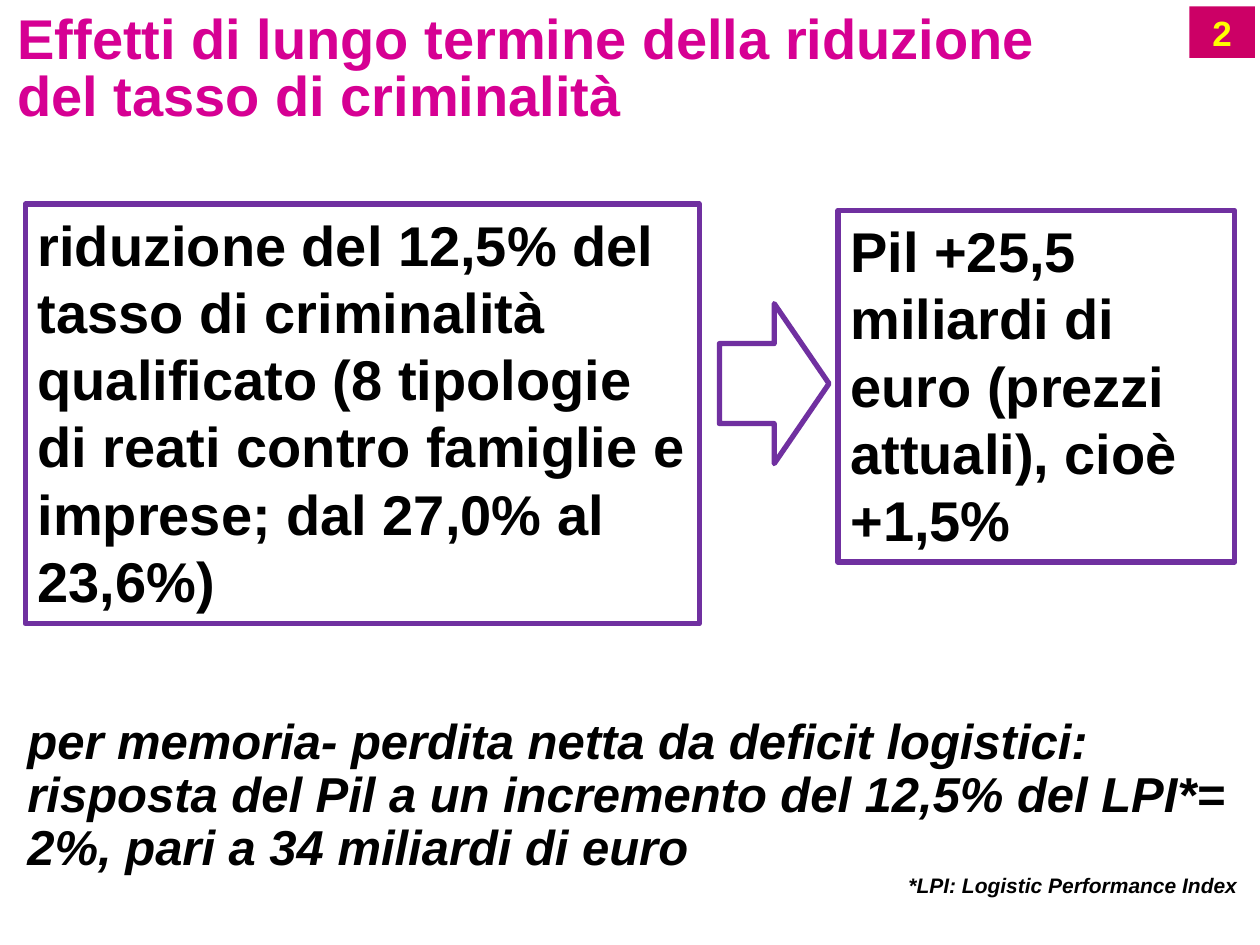
from pptx import Presentation
from pptx.dml.color import RGBColor
from pptx.enum.shapes import MSO_SHAPE
from pptx.enum.text import MSO_ANCHOR, MSO_AUTO_SIZE, PP_ALIGN
from pptx.util import Inches, Pt

WIDE, HIGH = 10, 7.5
COLORS = {
    "title": "D60093",
    "badge": "CC0066",
    "number": "FFFF00",
    "edge": "7030A0",
    "text": "000000",
    "paper": "FFFFFF",
}
BODY = {"name": "Arial", "size": Pt(32), "bold": True}
MEMO = BODY | {"size": Pt(28), "italic": True}
NOTE = MEMO | {"size": Pt(12)}
GROW = {"word_wrap": True, "auto_size": MSO_AUTO_SIZE.SHAPE_TO_FIT_TEXT}
MID = {"word_wrap": False, "vertical_anchor": MSO_ANCHOR.MIDDLE}


def color(key):
    return RGBColor.from_string(COLORS[key])


def apply(item, values):
    for key, value in values.items():
        setattr(item, key, value)


def panel(slide, kind, box, fill=None, edge=None):
    """Draw a preset shape; box is left, top, width, height in inches."""
    shape = slide.shapes.add_shape(kind, *map(Inches, box))
    shape.shadow.inherit = False
    if fill:
        shape.fill.solid()
        shape.fill.fore_color.rgb = color(fill)
    else:
        shape.fill.background()
    if edge:
        shape.line.color.rgb = color(edge)
        shape.line.width = Pt(3)
    else:
        shape.line.fill.background()
    return shape


def write(shape, lines, frame=GROW):
    """Fill a shape with (text, font, color, paragraph format) lines."""
    body = shape.text_frame
    apply(body, {"vertical_anchor": MSO_ANCHOR.TOP} | frame)
    for i, (text, font, ink, form) in enumerate(lines):
        para = body.add_paragraph() if i else body.paragraphs[0]
        apply(para, {"alignment": PP_ALIGN.LEFT} | form)
        run = para.add_run()
        run.text = text
        apply(run.font, font)
        run.font.color.rgb = color(ink)


def head(slide):
    rect = MSO_SHAPE.RECTANGLE
    title = "Effetti di lungo termine della riduzione del tasso di criminalità"
    write(panel(slide, rect, (0.04, 0.06, 8.66, 1.02), "paper"),
          [(title, BODY, "title", {"line_spacing": 0.85})])
    write(panel(slide, rect, (9.44, 0.05, 0.52, 0.41), "badge"),
          [("2", BODY | {"size": Pt(20)}, "number",
            {"alignment": PP_ALIGN.CENTER})], MID)


def flow(slide):
    """Cause and effect boxes, joined by a block arrow."""
    cause = ("riduzione del 12,5% del tasso di criminalità qualificato "
             "(8 tipologie di reati contro famiglie e imprese; "
             "dal 27,0% al 23,6%)")
    effect = "Pil +25,5 miliardi di euro (prezzi attuali), cioè +1,5%"
    side = 0.02 * WIDE
    wide = 3.15
    boxes = [
        (cause, (side, 1.62, 5.35, 3.33)),
        (effect, (WIDE - side - wide, 1.67, wide, 2.79)),
    ]
    for text, box in boxes:
        shape = panel(slide, MSO_SHAPE.RECTANGLE, box, edge="edge")
        write(shape, [(text, BODY, "text", {})])
    panel(slide, MSO_SHAPE.RIGHT_ARROW, (5.71, 2.41, 0.87, 1.27), edge="edge")


def memo(slide):
    text = ("per memoria- perdita netta da deficit logistici: risposta del "
            "Pil a un incremento del 12,5% del LPI*= 2%, pari a 34 miliardi "
            "di euro")
    box = map(Inches, (0.12, 5.64, 0.98 * WIDE, 1.56))
    tight = {"line_spacing": 0.9}
    write(slide.shapes.add_textbox(*box), [
        (text, MEMO, "text", tight),
        ("*LPI: Logistic Performance Index", NOTE, "text",
         tight | {"alignment": PP_ALIGN.RIGHT}),
    ])


def main():
    deck = Presentation()
    apply(deck, {"slide_width": Inches(WIDE), "slide_height": Inches(HIGH)})
    slide = deck.slides.add_slide(deck.slide_layouts[6])
    head(slide)
    flow(slide)
    memo(slide)
    deck.save("out.pptx")


if __name__ == "__main__":
    main()
